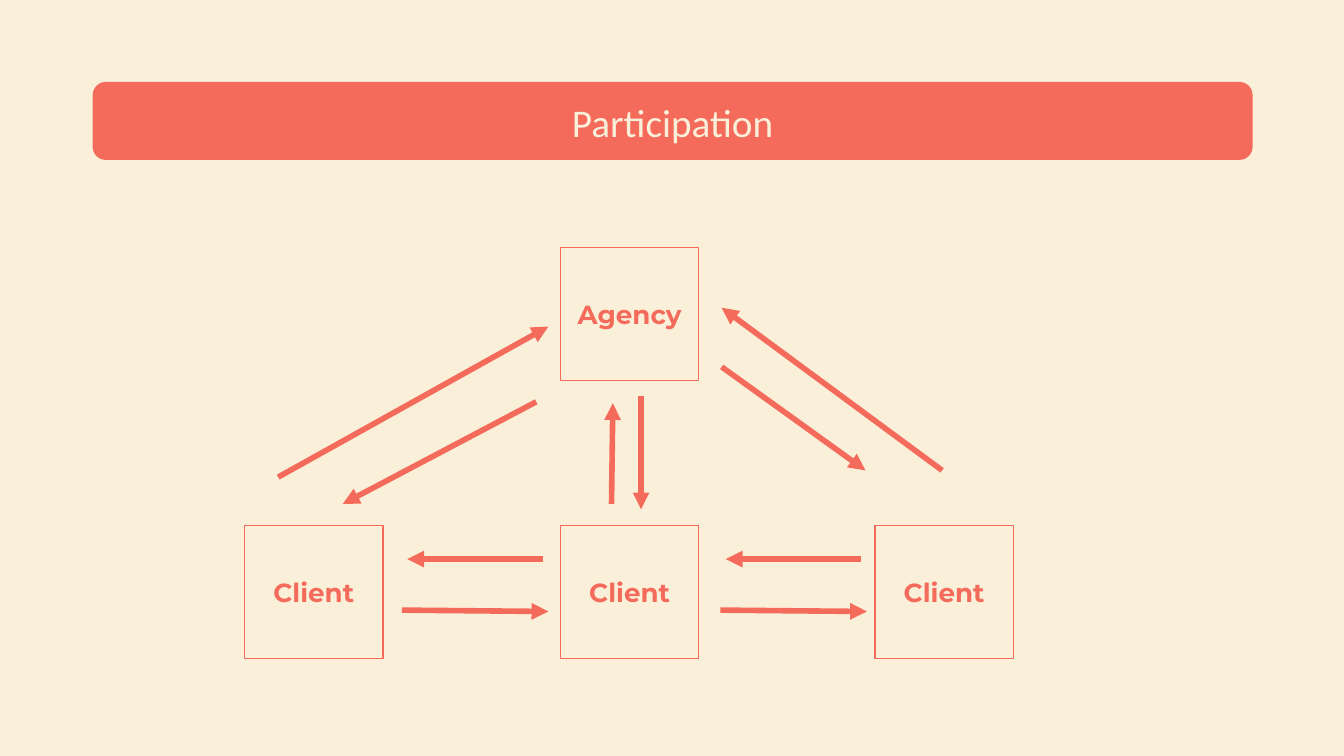
import dataclasses

import lxml.etree
import pptx
import pptx.dml.color
import pptx.enum.shapes
import pptx.enum.text
import pptx.oxml.ns
import pptx.util

COLUMNS = 10
ROWS = COLUMNS * 9 / 16
CELL = pptx.util.Inches(1)
COLORS = {"cream": "FAEFD9", "coral": "F46B5C"}


@dataclasses.dataclass(frozen=True)
class Area:
    column: float
    row: float
    columns: float
    rows: float


@dataclasses.dataclass(frozen=True)
class Party:
    label: str
    area: Area


@dataclasses.dataclass(frozen=True)
class Flow:
    from_column: float
    from_row: float
    to_column: float
    to_row: float


BANNER = Area(0.69, 0.61, 8.63, 0.58)
HEADING = Area(0.79, 0.59, 8.43, 0.63)
CLIENT_COLUMNS = (1.82, 4.17, 6.51)
PARTIES = [Party("Agency", Area(CLIENT_COLUMNS[1], 1.84, 1.03, 0.99))] + [
    Party("Client", Area(column, 3.91, 1.03, 0.99)) for column in CLIENT_COLUMNS
]

AGENCY_FLOWS = [
    Flow(3.99, 2.99, 2.55, 3.75),
    Flow(4.77, 2.95, 4.77, 3.79),
    Flow(5.37, 2.73, 6.44, 3.50),
    Flow(2.07, 3.55, 4.08, 2.43),
    Flow(4.55, 3.75, 4.56, 3.00),
    Flow(7.01, 3.50, 5.37, 2.29),
]
CLIENT_FLOWS = [
    Flow(start + shift, row, end + shift, end_row)
    for shift in (0, 2.37)
    for start, row, end, end_row in ((2.99, 4.54, 4.08, 4.55), (4.04, 4.16, 3.03, 4.16))
]


def color(name: str) -> pptx.dml.color.RGBColor:
    return pptx.dml.color.RGBColor.from_string(COLORS[name])


def cells(*counts: float) -> list[int]:
    return [round(count * CELL) for count in counts]


def bounds(area: Area) -> list[int]:
    return cells(*dataclasses.astuple(area))


def write_label(shape, text: str, face: str, size: float, ink: str, bold: bool) -> None:
    frame = shape.text_frame
    frame.word_wrap = True
    frame.vertical_anchor = pptx.enum.text.MSO_ANCHOR.MIDDLE
    frame.margin_left = frame.margin_right = pptx.util.Inches(0.1)
    frame.margin_top = frame.margin_bottom = pptx.util.Inches(0.1)
    paragraph = frame.paragraphs[0]
    paragraph.text = text
    paragraph.alignment = pptx.enum.text.PP_ALIGN.CENTER
    paragraph.font.name = face
    paragraph.font.size = pptx.util.Pt(size)
    paragraph.font.bold = bold
    paragraph.font.color.rgb = color(ink)


def draw_heading(slide, text: str) -> None:
    banner = slide.shapes.add_shape(
        pptx.enum.shapes.MSO_SHAPE.ROUNDED_RECTANGLE, *bounds(BANNER)
    )
    banner.shadow.inherit = False
    banner.fill.solid()
    banner.fill.fore_color.rgb = color("coral")
    banner.line.fill.background()
    heading = slide.shapes.add_textbox(*bounds(HEADING))
    write_label(heading, text, "Calibri", 21, "cream", False)


def draw_party(slide, party: Party) -> None:
    box = slide.shapes.add_shape(
        pptx.enum.shapes.MSO_SHAPE.RECTANGLE, *bounds(party.area)
    )
    box.shadow.inherit = False
    box.fill.solid()
    box.fill.fore_color.rgb = color("cream")
    box.line.color.rgb = color("coral")
    box.line.width = pptx.util.Pt(0.75)
    write_label(box, party.label, "Montserrat", 14, "coral", True)


def draw_flow(slide, flow: Flow) -> None:
    arrow = slide.shapes.add_connector(
        pptx.enum.shapes.MSO_CONNECTOR.STRAIGHT, *cells(*dataclasses.astuple(flow))
    )
    arrow.line.color.rgb = color("coral")
    arrow.line.width = pptx.util.Pt(3)
    properties = arrow._element.spPr
    outline = properties.find(pptx.oxml.ns.qn("a:ln"))
    lxml.etree.SubElement(outline, pptx.oxml.ns.qn("a:tailEnd"), type="triangle")
    lxml.etree.SubElement(properties, pptx.oxml.ns.qn("a:effectLst"))


def main() -> None:
    presentation = pptx.Presentation()
    presentation.slide_width, presentation.slide_height = cells(COLUMNS, ROWS)
    slide = presentation.slides.add_slide(presentation.slide_layouts[6])
    slide.background.fill.solid()
    slide.background.fill.fore_color.rgb = color("cream")

    draw_heading(slide, "Participation")
    for party in PARTIES:
        draw_party(slide, party)
    for flow in AGENCY_FLOWS + CLIENT_FLOWS:
        draw_flow(slide, flow)
    presentation.save("out.pptx")


if __name__ == "__main__":
    main()
